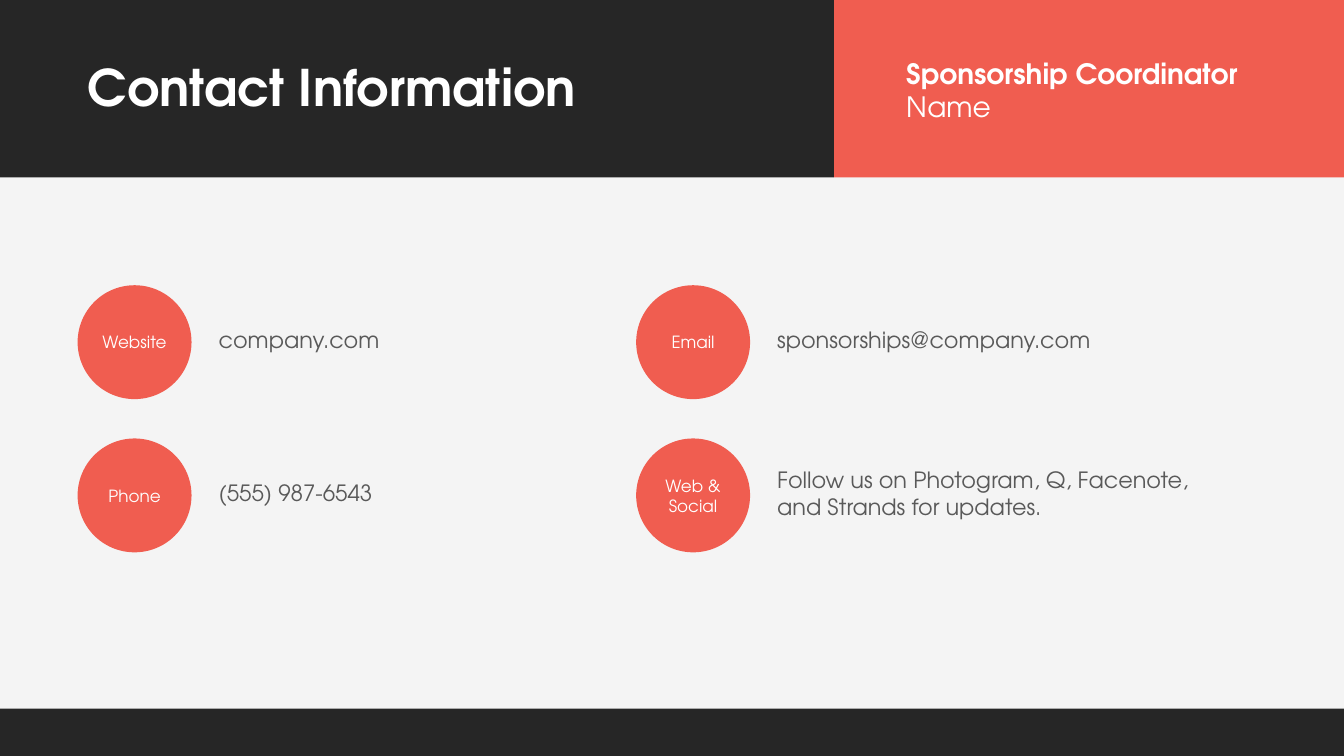
from pptx import Presentation
from pptx.dml.color import RGBColor
from pptx.enum.shapes import MSO_SHAPE as SHAPE
from pptx.enum.text import MSO_ANCHOR as ANCHOR, PP_ALIGN as ALIGN
from pptx.util import Inches, Pt

FONT = "TeX Gyre Adventor"
COLORS = {"coral": "F05D50", "dark": "262626", "light": "F4F4F4",
          "gray": "595959", "white": "FFFFFF"}

prs = Presentation()
prs.slide_width, prs.slide_height = Inches(13.33), Inches(7.5)
slide = prs.slides.add_slide(prs.slide_layouts[5])
slide.background.fill.solid()
slide.background.fill.fore_color.rgb = RGBColor.from_string(COLORS["light"])


def add_block(kind, x, y, w, h, color):
    """Add a filled shape without line or shadow."""
    sp = slide.shapes.add_shape(kind, Inches(x), Inches(y), Inches(w), Inches(h))
    sp.shadow.inherit = False
    sp.fill.solid()
    sp.fill.fore_color.rgb = RGBColor.from_string(COLORS[color])
    sp.line.fill.background()
    return sp


def add_run(p, text, size, color, align=ALIGN.LEFT, bold=False):
    p.alignment = align
    r = p.add_run()
    r.text = text
    r.font.name, r.font.size, r.font.bold = FONT, Pt(size), bold
    r.font.color.rgb = RGBColor.from_string(COLORS[color])


# Header and footer bands
add_block(SHAPE.RECTANGLE, 8.27, 0, 5.06, 1.76, "coral")
add_block(SHAPE.RECTANGLE, 0, 0, 8.27, 1.76, "dark")
add_block(SHAPE.RECTANGLE, 0, 7.03, 13.33, 0.47, "dark")

title = slide.shapes.title
title.left, title.top = Inches(0.77), Inches(0.51)
title.width, title.height = Inches(5.66), Inches(0.71)
title.text_frame.vertical_anchor = ANCHOR.TOP
add_run(title.text_frame.paragraphs[0], "Contact Information", 36, "white", bold=True)
# Bring the title in front of the bands
slide.shapes._spTree.append(title._element)

coordinator = slide.shapes.add_textbox(Inches(8.89), Inches(0.51), Inches(3.94), Inches(0.77))
tf = coordinator.text_frame
tf.word_wrap = True
add_run(tf.paragraphs[0], "Sponsorship Coordinator", 20, "white", bold=True)
add_run(tf.add_paragraph(), "Name", 20, "white")

# Contact grid: one list per row, each entry a label and its detail
CONTACTS = [
    [("Website", "company.com"), ("Email", "sponsorships@company.com")],
    [("Phone", "(555) 987-6543"),
     ("Web & Social", "Follow us on Photogram, Q, Facenote, and Strands for updates.")],
]
LEFT, TOP, COL_STEP, ROW_STEP = 0.77, 2.83, 5.54, 1.52
CIRCLE = 1.13
DETAIL_X, DETAIL_Y, DETAIL_H = 1.3, 0.22, 0.64
DETAIL_WIDTHS = [3.53, 4.35]

for row, contacts in enumerate(CONTACTS):
    for col, (label, detail) in enumerate(contacts):
        x, y = LEFT + col * COL_STEP, TOP + row * ROW_STEP
        circle = add_block(SHAPE.OVAL, x, y, CIRCLE, CIRCLE, "coral")
        tf = circle.text_frame
        tf.margin_left = tf.margin_right = 0
        tf.vertical_anchor = ANCHOR.MIDDLE
        add_run(tf.paragraphs[0], label, 12, "white", ALIGN.CENTER)

        box = slide.shapes.add_textbox(Inches(x + DETAIL_X), Inches(y + DETAIL_Y),
                                       Inches(DETAIL_WIDTHS[col]), Inches(DETAIL_H))
        tf = box.text_frame
        tf.word_wrap = True
        tf.vertical_anchor = ANCHOR.MIDDLE
        add_run(tf.paragraphs[0], detail, 16, "gray")

prs.save("out.pptx")
